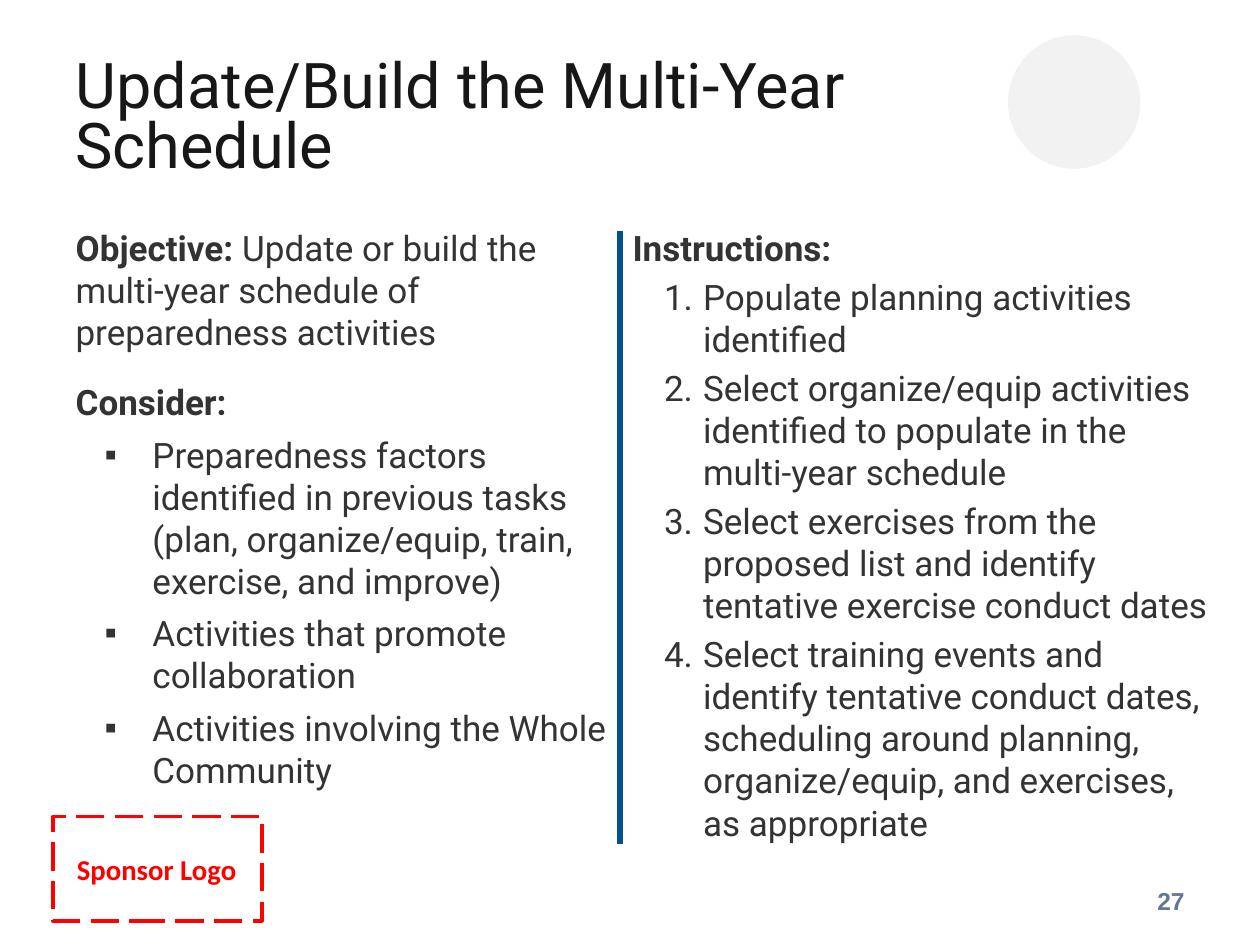
from lxml import etree
from pptx import Presentation
from pptx import util as u
from pptx.dml.color import RGBColor
from pptx.enum import dml, shapes, text
from pptx.oxml.ns import qn

HUES = {"title": "181717", "body": "333333", "rule": "005288",
        "disc": "F2F2F2", "logo": "FF0000", "page": "647796"}


def style(run, size, font, hue, bold=False):
    run.font.size = u.Pt(size)
    run.font.name = font
    run.font.bold = bold
    run.font.color.rgb = RGBColor.from_string(HUES[hue])


def mark(para, left, hang, tag, **attrs):
    props = para._p.get_or_add_pPr()
    props.set("marL", str(u.Inches(left)))
    props.set("indent", str(u.Inches(hang)))
    if tag == "buChar":
        etree.SubElement(props, qn("a:buFont"), typeface="Arial")
    etree.SubElement(props, qn("a:" + tag), **attrs)


deck = Presentation()
deck.slide_width, deck.slide_height = u.Inches(10), u.Inches(7.5)
slide = deck.slides.add_slide(deck.slide_layouts[3])
items = slide.shapes

frame = items.add_shape(shapes.MSO_SHAPE.RECTANGLE, u.Inches(0.42), u.Inches(6.48),
                        u.Inches(1.66), u.Inches(0.83))
frame.shadow.inherit = False
frame.fill.background()
frame.line.color.rgb = RGBColor.from_string(HUES["logo"])
frame.line.width = u.Pt(2)
frame.line.dash_style = dml.MSO_LINE.LONG_DASH

title = items.title
title.left, title.top = u.Inches(0.5), u.Inches(0.33)
title.width, title.height = u.Inches(7.77), u.Inches(1.25)
title.text_frame.text = "Update/Build the Multi-Year Schedule"
title.text_frame.auto_size = text.MSO_AUTO_SIZE.NONE
title.text_frame.vertical_anchor = text.MSO_ANCHOR.MIDDLE
head = title.text_frame.paragraphs[0]
head.alignment = text.PP_ALIGN.LEFT
head.line_spacing = 0.8
style(head.runs[0], 36, "Roboto", "title")

square = (0.61, -0.38, "buChar", {"char": "▪"}, 6)
number = (0.56, -0.31, "buAutoNum", {"type": "arabicPeriod"}, 4)
columns = [
    (1, 0.5, 4.42, square, [
        ("Objective:", " Update or build the multi-year schedule of preparedness activities"),
        ("Consider:", ""),
        ("", "Preparedness factors identified in previous tasks "
             "(plan, organize/equip, train, exercise, and improve)"),
        ("", "Activities that promote collaboration"),
        ("", "Activities involving the Whole Community")]),
    (2, 4.92, 4.83, number, [
        ("Instructions:", ""),
        ("", "Populate planning activities identified"),
        ("", "Select organize/equip activities identified to populate in the multi-year schedule"),
        ("", "Select exercises from the proposed list and identify tentative exercise conduct dates"),
        ("", "Select training events and identify tentative conduct dates, scheduling "
             "around planning, organize/equip, and exercises, as appropriate")]),
]
for index, left, width, bullet, lines in columns:
    body = slide.placeholders[index]
    body.left, body.top = u.Inches(left), u.Inches(1.75)
    body.width, body.height = u.Inches(width), u.Inches(4.95)
    body.text_frame.auto_size = text.MSO_AUTO_SIZE.NONE
    body.text_frame.text = "\n".join(label + words for label, words in lines)
    for para, (label, words) in zip(body.text_frame.paragraphs, lines):
        indent, hang, tag, attrs, gap = bullet
        if label:
            para.runs[0].text = label
            if words:
                para.add_run().text = words
                para.space_after = u.Pt(12)
            para.space_before = u.Pt(4)
            mark(para, 0, 0, "buNone")
        else:
            para.level = 1
            para.space_before = u.Pt(gap)
            mark(para, indent, hang, tag, **attrs)
        for run in para.runs:
            style(run, 20, "Roboto", "body", run.text == label)

rule = items.add_connector(shapes.MSO_CONNECTOR.STRAIGHT, u.Inches(4.92), u.Inches(1.83),
                           u.Inches(4.92), u.Inches(6.7))
rule.line.color.rgb = RGBColor.from_string(HUES["rule"])
rule.line.width = u.Pt(3.75)
etree.SubElement(rule._element.spPr, qn("a:effectLst"))

disc = items.add_shape(shapes.MSO_SHAPE.OVAL, u.Inches(8), u.Inches(0.28),
                       u.Inches(1.05), u.Inches(1.06))
disc.shadow.inherit = False
disc.fill.solid()
disc.fill.fore_color.rgb = RGBColor.from_string(HUES["disc"])
disc.line.fill.background()

labels = [
    ("Sponsor Logo", 0.61, 6.76, 1.43, 0.28, 0, 16.4, "Calibri", "logo",
     text.PP_ALIGN.LEFT, text.MSO_ANCHOR.TOP),
    ("27", 7.17, 6.95, 2.33, 0.4, 0.1, 14, "Arial", "page",
     text.PP_ALIGN.RIGHT, text.MSO_ANCHOR.MIDDLE),
]
for words, left, top, width, height, inset, size, font, hue, align, anchor in labels:
    box = items.add_textbox(u.Inches(left), u.Inches(top), u.Inches(width), u.Inches(height))
    area = box.text_frame
    area.word_wrap = True
    area.margin_left = area.margin_right = u.Inches(inset)
    area.margin_top = area.margin_bottom = 0
    area.vertical_anchor = anchor
    area.text = words
    area.paragraphs[0].alignment = align
    style(area.paragraphs[0].runs[0], size, font, hue, True)

deck.save("out.pptx")
